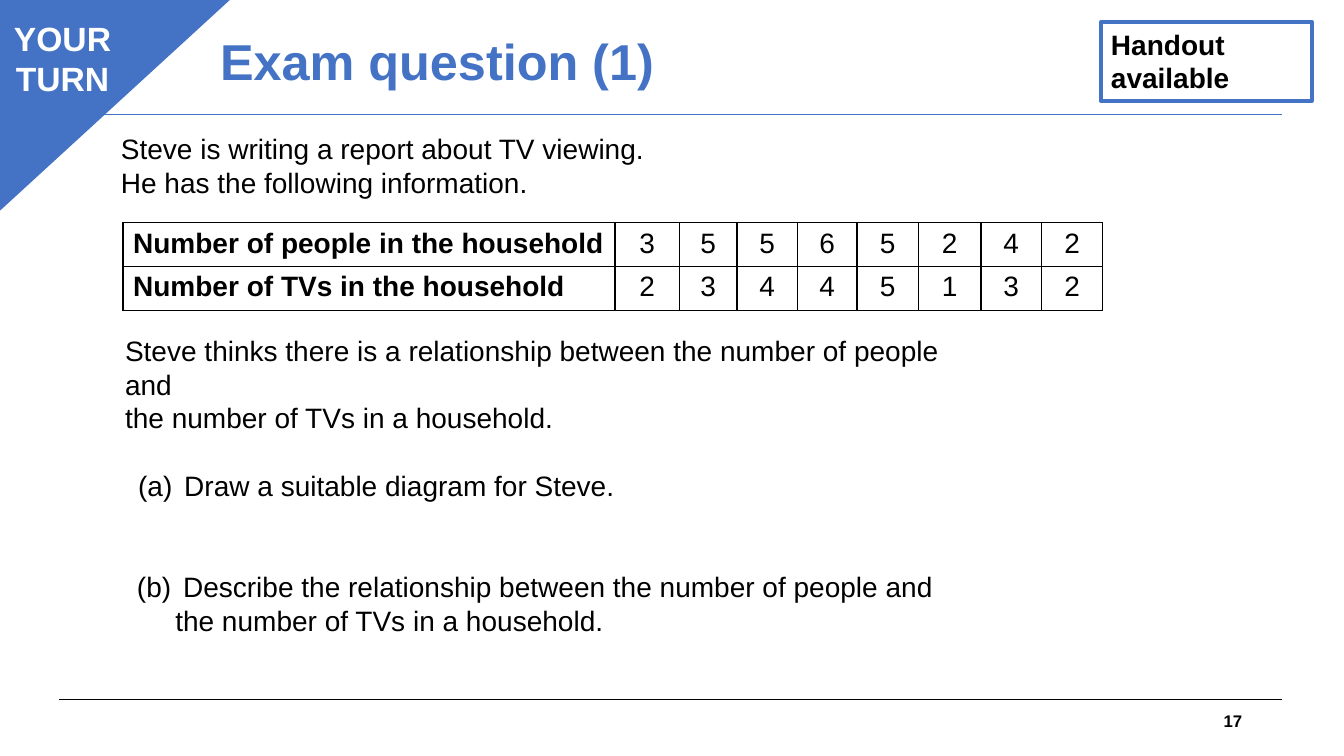
import pptx
import pptx.dml.color
import pptx.enum.shapes
import pptx.enum.text
import pptx.oxml
import pptx.oxml.ns
import pptx.util

Inches = pptx.util.Inches
Pt = pptx.util.Pt
RGBColor = pptx.dml.color.RGBColor
Shape = pptx.enum.shapes.MSO_SHAPE
Align = pptx.enum.text.PP_ALIGN
Anchor = pptx.enum.text.MSO_ANCHOR

BLUE = RGBColor(0x44, 0x72, 0xC4)
BLACK = RGBColor(0, 0, 0)
WHITE = RGBColor(0xFF, 0xFF, 0xFF)
FONT = "Arial"

COLUMN_WIDTHS = [4.88, 0.64, 0.57, 0.6, 0.59, 0.61, 0.62, 0.6, 0.61]
TABLE_ROWS = [
    ["Number of people in the household", 3, 5, 5, 6, 5, 2, 4, 2],
    ["Number of TVs in the household", 2, 3, 4, 4, 5, 1, 3, 2],
]


def place(shape, left, top, width, height):
    shape.left, shape.top = Inches(left), Inches(top)
    shape.width, shape.height = Inches(width), Inches(height)


def write(text_frame, lines, size=20, color=BLACK, bold=False,
          align=Align.LEFT, anchor=Anchor.TOP, spacing=1.0):
    text_frame.word_wrap = True
    text_frame.auto_size = pptx.enum.text.MSO_AUTO_SIZE.NONE
    text_frame.vertical_anchor = anchor
    text_frame.text = "\n".join(lines)
    for paragraph in text_frame.paragraphs:
        paragraph.alignment = align
        paragraph.line_spacing = spacing
        paragraph.space_before = Pt(0)
        for run in paragraph.runs:
            run.font.name = FONT
            run.font.size = Pt(size)
            run.font.bold = bold
            run.font.color.rgb = color


def set_bullet(paragraph, margin=0.0, indent=0.0, start=None):
    """Letter the paragraph (a), (b), ... from start, or remove its bullet."""
    properties = paragraph._p.get_or_add_pPr()
    properties.set("marL", str(Inches(margin)))
    properties.set("indent", str(Inches(indent)))
    tag = "a:buNone" if start is None else "a:buAutoNum"
    bullet = pptx.oxml.ns.qn(tag)
    element = properties.makeelement(bullet, {})
    if start is not None:
        element.set("type", "alphaLcParenBoth")
        element.set("startAt", str(start))
    properties.append(element)


def add_text(slide, box, lines, **style):
    text_box = slide.shapes.add_textbox(0, 0, 0, 0)
    place(text_box, *box)
    write(text_box.text_frame, lines, **style)
    return text_box


def add_rule(slide, left, right, top, color):
    rule = slide.shapes.add_connector(
        pptx.enum.shapes.MSO_CONNECTOR.STRAIGHT,
        Inches(left), Inches(top), Inches(right), Inches(top))
    rule.line.color.rgb = color
    rule.line.width = Pt(0.75)
    properties = rule._element.spPr
    properties.append(properties.makeelement(pptx.oxml.ns.qn("a:effectLst"), {}))


def add_box(shapes, kind, box, line_width, fill=None):
    shape = shapes.add_shape(kind, 0, 0, 0, 0)
    place(shape, *box)
    shape.shadow.inherit = False
    shape.line.color.rgb = BLUE
    shape.line.width = Pt(line_width)
    if fill is None:
        shape.fill.background()
    else:
        shape.fill.solid()
        shape.fill.fore_color.rgb = fill
    return shape


def add_corner_flag(slide):
    group = slide.shapes.add_group_shape()
    corner = add_box(group.shapes, Shape.ISOSCELES_TRIANGLE,
                     (-0.01, -0.01, 2.29, 2.1), 1, BLUE)
    corner.adjustments[0] = 0
    corner._element.spPr.xfrm.set("flipV", "1")
    label = add_box(group.shapes, Shape.RECTANGLE,
                    (0.03, 0.13, 1.18, 0.83), 0.75, BLUE)
    write(label.text_frame, ["YOUR ", "TURN"], size=24, color=WHITE,
          bold=True, align=Align.CENTER)


def set_borders(cell):
    properties = cell._tc.get_or_add_tcPr()
    namespace = pptx.oxml.ns.nsdecls("a")
    for position, side in enumerate(("lnL", "lnR", "lnT", "lnB")):
        properties.insert(position, pptx.oxml.parse_xml(
            f'<a:{side} {namespace} w="{Pt(1)}"><a:solidFill>'
            f'<a:srgbClr val="{BLACK}"/></a:solidFill></a:{side}>'))


def add_household_table(slide):
    frame = slide.shapes.add_table(
        len(TABLE_ROWS), len(COLUMN_WIDTHS), Inches(1.22), Inches(2.21),
        Inches(sum(COLUMN_WIDTHS)), Inches(0.87))
    table = frame.table
    table.first_row = table.horz_banding = False
    for column, width in zip(table.columns, COLUMN_WIDTHS):
        column.width = Inches(width)
    for row_index, values in enumerate(TABLE_ROWS):
        for column_index, value in enumerate(values):
            cell = table.cell(row_index, column_index)
            heading = column_index == 0
            cell.text = str(value)
            paragraph = cell.text_frame.paragraphs[0]
            paragraph.alignment = Align.LEFT if heading else Align.CENTER
            font = paragraph.runs[0].font
            font.name, font.size, font.bold = FONT, Pt(20), heading
            font.color.rgb = BLACK
            cell.fill.background()
            set_borders(cell)


def main():
    presentation = pptx.Presentation()
    presentation.slide_width = Inches(13.33)
    presentation.slide_height = Inches(7.5)
    slide = presentation.slides.add_slide(presentation.slide_layouts[1])

    # Rules under the title and above the footer
    add_rule(slide, 0.59, 12.72, 6.94, BLACK)
    add_rule(slide, 0.59, 12.72, 1.14, BLUE)

    # Header
    title = slide.shapes.title
    place(title, -1.7, 0.08, 12.21, 1.11)
    write(title.text_frame, ["Exam question (1) "], size=36, color=BLUE,
          bold=True, align=Align.CENTER, anchor=Anchor.MIDDLE, spacing=0.9)
    handout = add_box(slide.shapes, Shape.RECTANGLE, (10.92, 0.22, 2.09, 0.78), 3)
    write(handout.text_frame, ["Handout\vavailable"], bold=True)
    add_corner_flag(slide)

    # Introduction and data
    add_text(slide, (1.1, 1.26, 5.45, 0.77),
             ["Steve is writing a report about TV viewing.",
              "He has the following information."])
    add_household_table(slide)

    # Claim and question (a)
    body = slide.placeholders[1]
    place(body, 1.14, 3.26, 8.6, 1.78)
    write(body.text_frame,
          ["Steve thinks there is a relationship between the number of people and",
           "the number of TVs in a household.",
           " Draw a suitable diagram for Steve."])
    first, second, question = body.text_frame.paragraphs
    set_bullet(first)
    set_bullet(second)
    question.space_before = Pt(24)
    set_bullet(question, 0.51, -0.38, start=1)

    # Question (b)
    describe = add_text(
        slide, (1.26, 5.6, 8.48, 0.77),
        [" Describe the relationship between the number of people and "
         "the number of TVs in a household."])
    set_bullet(describe.text_frame.paragraphs[0], 0.38, -0.38, start=2)

    # Slide number
    add_text(slide, (9.42, 6.95, 3, 0.4), ["17"], size=12, bold=True,
             align=Align.RIGHT, anchor=Anchor.MIDDLE)

    presentation.save("out.pptx")


if __name__ == "__main__":
    main()
